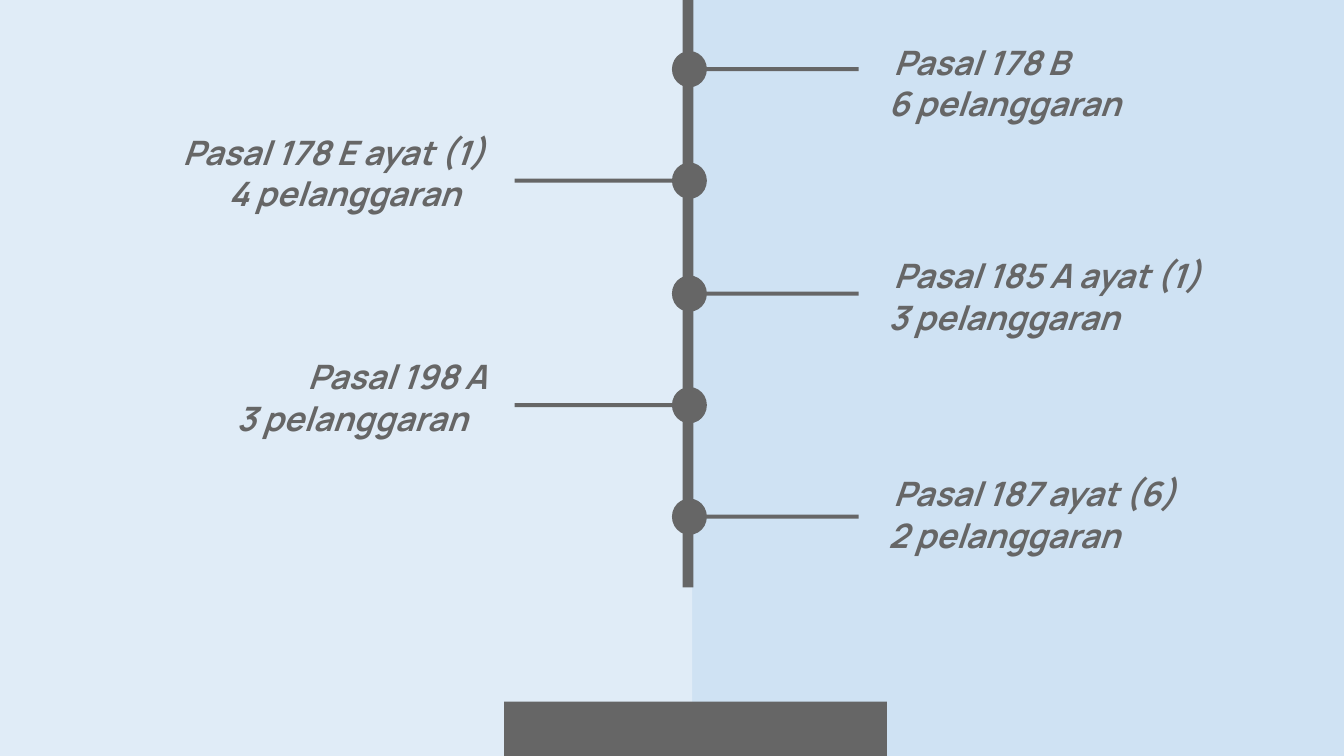
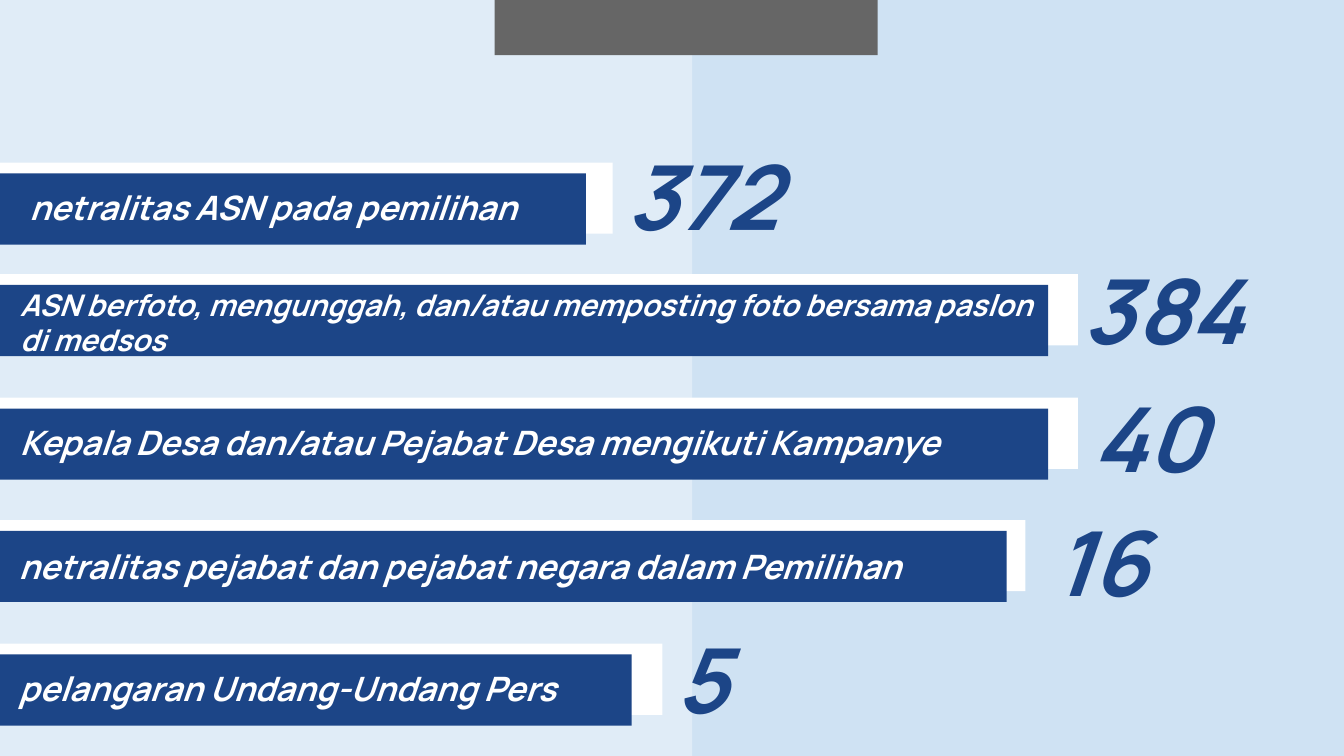
from dataclasses import dataclass

from lxml import etree
from pptx import Presentation
from pptx import util as u
from pptx.dml import color
from pptx.enum import shapes, text
from pptx.oxml import ns

PX = u.Inches(1) // 100


@dataclass(frozen=True)
class Theme:
    """Colours, font and type sizes of the deck."""
    sky: str = "CFE2F3"
    white: str = "FFFFFF"
    grey: str = "666666"
    navy: str = "1C4587"
    font: str = "Manrope"
    small: int = 16
    body: int = 18
    number: int = 48


@dataclass(frozen=True)
class Box:
    """A rectangle in px."""
    left: int
    top: int
    width: int
    height: int

    def inner(self, left, top, width, height):
        """Return a box placed from this box's top left corner."""
        return Box(self.left + left, self.top + top, width, height)

    def emu(self):
        """Return left, top, width and height in EMU."""
        return [length * PX for length in (self.left, self.top, self.width, self.height)]


@dataclass(frozen=True)
class Event:
    """One article on the timeline."""
    article: str
    amount: str
    on_right: bool
    article_left: int
    amount_left: int
    label_top: int
    article_width: int


@dataclass(frozen=True)
class Bar:
    """One violation bar with its count."""
    label: str
    size: int
    top: int
    back_width: int
    front_width: int
    label_left: int
    label_top: int
    label_width: int
    count: str
    count_left: int
    count_top: int
    count_width: int


THEME = Theme()
PAGE = Box(0, 0, 1000, 563)
ROW_PITCH = 250 / 3
AMOUNT_DROP = 31

EVENTS = [
    Event("Pasal 178 B", "6 pelanggaran", True, 655, 651, 21, 179),
    Event("Pasal 178 E ayat (1)", "4 pelanggaran", False, 126, 160, 88, 309),
    Event("Pasal 185 A ayat (1)", "3 pelanggaran", True, 655, 651, 180, 345),
    Event("Pasal 198 A", "3 pelanggaran", False, 219, 166, 255, 159),
    Event("Pasal 187 ayat (6)", "2 pelanggaran", True, 655, 651, 342, 257),
]

BARS = [
    Bar("netralitas ASN pada pemilihan", THEME.body,
        121, 456, 436, 12, 8, 423, "372", 456, -26, 216),
    Bar("ASN berfoto, mengunggah, dan/atau memposting foto bersama paslon di medsos",
        THEME.small, 204, 802, 780, 5, -1, 780, "384", 796, -24, 196),
    Bar("Kepala Desa dan/atau Pejabat Desa mengikuti Kampanye", THEME.body,
        296, 802, 780, 5, 8, 780, "40", 803, -21, 113),
    Bar("netralitas pejabat dan pejabat negara dalam Pemilihan", THEME.body,
        387, 763, 749, 4, 9, 745, "16", 773, -20, 136),
    Bar("pelangaran Undang-Undang Pers", THEME.body,
        479, 493, 470, 4, 8, 456, "5", 493, -25, 106),
]


def add_block(slide, box, fill, kind=shapes.MSO_SHAPE.RECTANGLE):
    """Add a flat filled shape without outline."""
    shape = slide.shapes.add_shape(kind, *box.emu())
    shape.shadow.inherit = False
    shape.fill.solid()
    shape.fill.fore_color.rgb = color.RGBColor.from_string(fill)
    shape.line.fill.background()
    return shape


def add_text(slide, box, words, size, ink):
    """Add a bold italic text box."""
    frame = slide.shapes.add_textbox(*box.emu()).text_frame
    frame.word_wrap = True
    frame.vertical_anchor = text.MSO_ANCHOR.TOP
    frame.margin_left = frame.margin_right = 10 * PX
    frame.margin_top = frame.margin_bottom = 10 * PX
    run = frame.paragraphs[0].add_run()
    run.text = words
    font = run.font
    font.name, font.size = THEME.font, u.Pt(size)
    font.bold = font.italic = True
    font.color.rgb = color.RGBColor.from_string(ink)


def add_page(presentation, tab):
    """Add a slide with the two-tone background and the grey tab."""
    slide = presentation.slides.add_slide(presentation.slide_layouts[6])
    fill = slide.background.fill
    fill.solid()
    fill.fore_color.rgb = color.RGBColor.from_string(THEME.sky)
    panel = add_block(slide, PAGE.inner(0, 0, 515, PAGE.height), THEME.white)
    tint = panel.fill._xPr.find(".//" + ns.qn("a:srgbClr"))
    etree.SubElement(tint, ns.qn("a:alpha"), val="37000")
    add_block(slide, tab, THEME.grey)
    return slide


def add_timeline(slide, box, events):
    """Draw the spine, its dots, the branches and their labels."""
    add_block(slide, box.inner(508, -1, 8, 438), THEME.grey)
    dot_tops = [38 + round(ROW_PITCH * row) for row in range(len(events))]
    for top in dot_tops:
        add_block(slide, box.inner(500, top, 26, 27), THEME.grey, shapes.MSO_SHAPE.OVAL)
    for top, event in zip(dot_tops, events):
        branch_left = 516 if event.on_right else 383
        add_block(slide, box.inner(branch_left, top + 12, 123, 3), THEME.grey)
        article_box = box.inner(event.article_left, event.label_top, event.article_width, 41)
        amount_box = box.inner(event.amount_left, event.label_top + AMOUNT_DROP, 249, 41)
        add_text(slide, article_box, event.article, THEME.body, THEME.grey)
        add_text(slide, amount_box, event.amount, THEME.body, THEME.grey)


def add_bar(slide, box, bar):
    """Draw a navy bar over its white backing, with label and count."""
    add_block(slide, box, THEME.white)
    add_block(slide, box.inner(0, 8, bar.front_width, box.height), THEME.navy)
    label_box = box.inner(bar.label_left, bar.label_top, bar.label_width, box.height)
    count_box = box.inner(bar.count_left, bar.count_top, bar.count_width, 94)
    add_text(slide, label_box, bar.label, bar.size, THEME.white)
    add_text(slide, count_box, bar.count, THEME.number, THEME.navy)


def main():
    """Build and save the deck."""
    presentation = Presentation()
    presentation.slide_width = PAGE.width * PX
    presentation.slide_height = presentation.slide_width * 9 // 16
    timeline_slide = add_page(presentation, PAGE.inner(375, 522, 285, 41))
    add_timeline(timeline_slide, PAGE, EVENTS)
    bars_slide = add_page(presentation, PAGE.inner(368, 0, 285, 41))
    for bar in BARS:
        add_bar(bars_slide, PAGE.inner(0, bar.top, bar.back_width, 53), bar)
    presentation.save("out.pptx")


if __name__ == "__main__":
    main()
